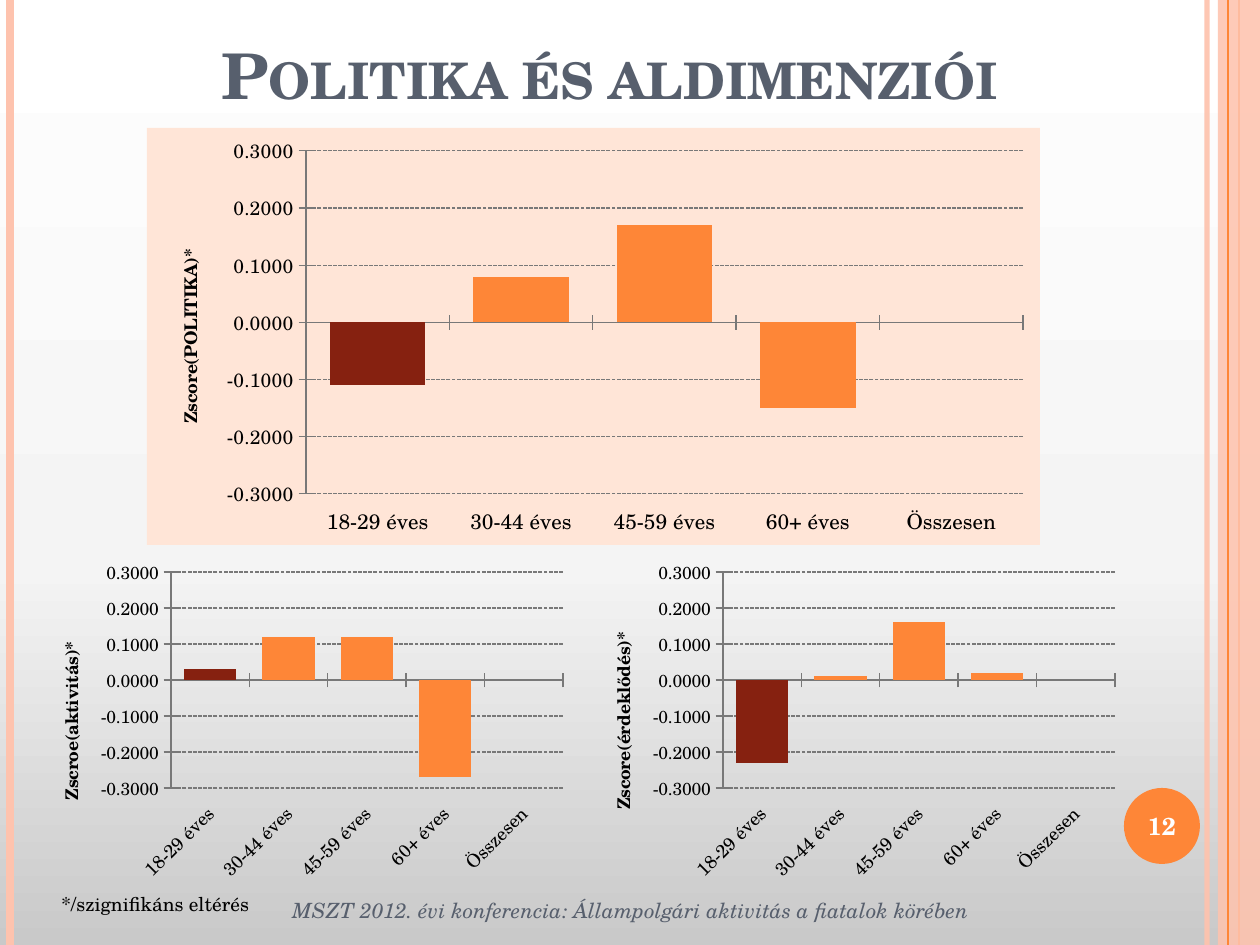
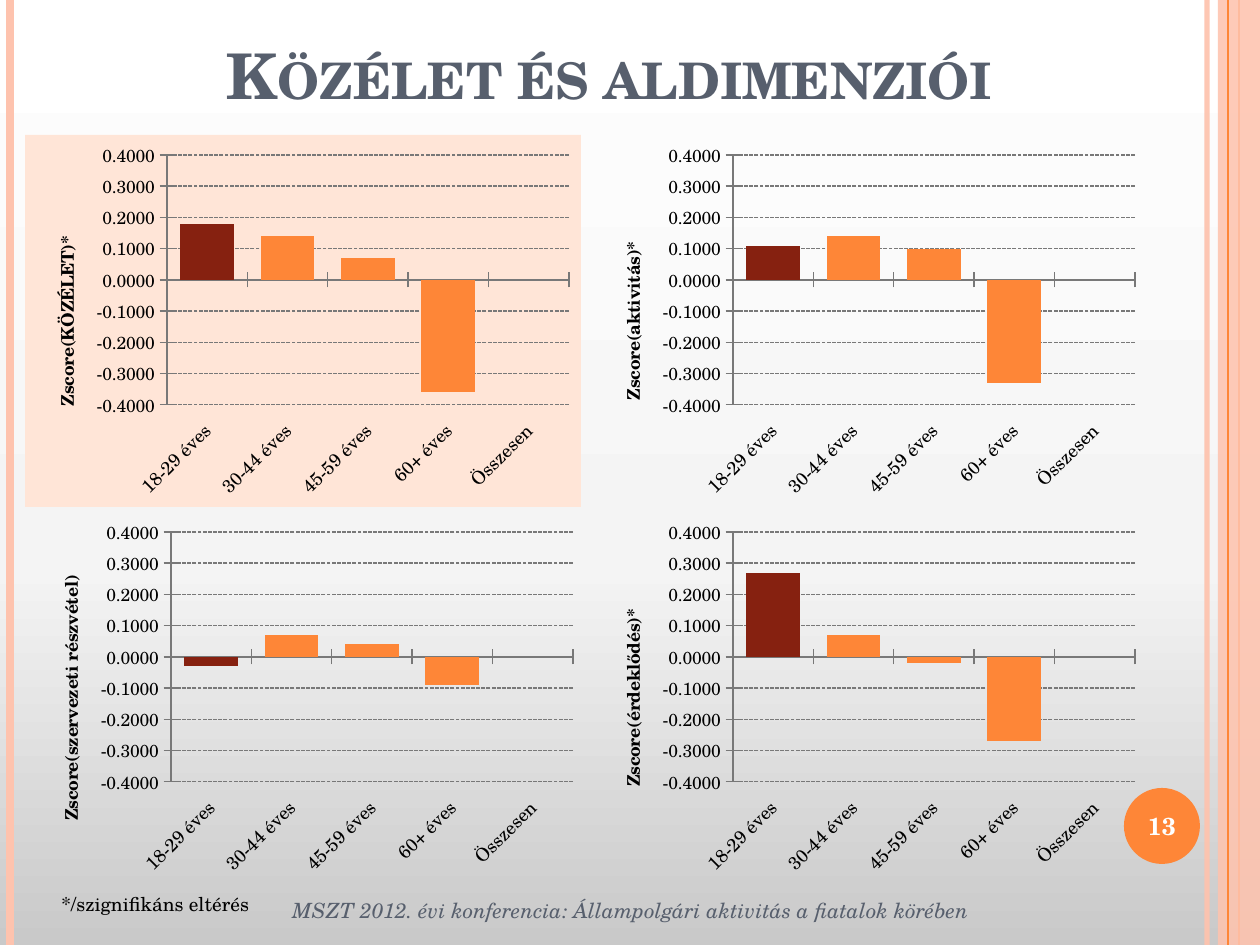
import copy

import pptx
import pptx.chart.data
import pptx.dml.color
import pptx.enum.chart
import pptx.enum.dml
import pptx.enum.shapes
import pptx.enum.text
import pptx.oxml
import pptx.oxml.ns
import pptx.util

SCALE = 914400 / 126
SLIDE_W, SLIDE_H = 1260, 945
FONT = "TeX Gyre Schola"
ORANGE, PEACH, PALE, DARK_RED = "FE8637", "FEC3AE", "FFE5D7", "862110"
SLATE, GREY, BLACK, WHITE = "575F6D", "787878", "000000", "FFFFFF"
BACKGROUND = [(0, "C9C9C9"), (0.4, "F4F4F4"), (1, "FFFFFF")]
# x, colour, width in points, opacity in percent
LINES_BEHIND = [(1207, PEACH, 3, 93), (10, PEACH, 4.5, 100), (1239, ORANGE, 1.5, 100)]
LINE_ON_BAND = (1228, ORANGE, 0.75, 100)
AGE_GROUPS = ["18-29 éves", "30-44 éves", "45-59 éves", "60+ éves", "Összesen"]
FOOTER = "MSZT 2012. évi konferencia: Állampolgári aktivitás a fiatalok körében"
FOOTNOTE = "*/szignifikáns eltérés"

LARGE = {"margins": (159, 23, 17, 51), "cat_size": 12, "val_size": 11, "turn": 0}
SMALL = {"margins": (142, 20, 12, 102), "cat_size": 10.5, "val_size": 10, "turn": -45}

ALIGN = pptx.enum.text.PP_ALIGN
ANCHOR = pptx.enum.text.MSO_ANCHOR


def px(*lengths):
    return [round(n * SCALE) for n in lengths]


def rgb(hex_colour):
    return pptx.dml.color.RGBColor.from_string(hex_colour)


def set_font(font, size, colour, **formats):
    font.name, font.size = FONT, pptx.util.Pt(size)
    font.color.rgb = rgb(colour)
    for name, value in formats.items():
        setattr(font, name, value)


def set_line(line, colour, width):
    line.color.rgb = rgb(colour)
    line.width = pptx.util.Pt(width)


def set_opacity(shape, percent):
    if percent < 100:
        colour = shape._element.spPr.xpath(".//a:srgbClr")[0]
        pptx.oxml.xmlchemy.OxmlElement  # registered with the oxml package
        alpha = pptx.oxml.parse_xml(
            f'<a:alpha {pptx.oxml.ns.nsdecls("a")} val="{percent * 1000}"/>')
        colour.append(alpha)


def add_vertical_line(s, x, colour, width, opacity):
    line = s.shapes.add_connector(
        pptx.enum.shapes.MSO_CONNECTOR.STRAIGHT, *px(x, 0, x, SLIDE_H))
    set_line(line.line, colour, width)
    set_opacity(line, opacity)
    line._element.spPr.append(
        pptx.oxml.parse_xml(f'<a:effectLst {pptx.oxml.ns.nsdecls("a")}/>'))


def add_filled(s, kind, box, colour, opacity=100):
    sp = s.shapes.add_shape(kind, *px(*box))
    sp.shadow.inherit = False
    sp.fill.solid()
    sp.fill.fore_color.rgb = rgb(colour)
    sp.line.fill.background()
    set_opacity(sp, opacity)


def write(sp, text, size, colour, align, anchor, wrap=True, **formats):
    tf = sp.text_frame
    tf.auto_size = pptx.enum.text.MSO_AUTO_SIZE.NONE
    tf.word_wrap, tf.vertical_anchor = wrap, anchor
    p = tf.paragraphs[0]
    p.alignment = align
    r = p.add_run()
    r.text = text
    set_font(r.font, size, colour, **formats)
    return r


def add_text(s, box, *args, **formats):
    write(s.shapes.add_textbox(*px(*box)), *args, **formats)


def set_background(master):
    fill = master.background.fill
    fill.gradient()
    fill.gradient_angle = 90
    stops = master._element.xpath(".//p:bg//a:gsLst")[0]
    stops.append(copy.deepcopy(stops[0]))
    for stop, (position, colour) in zip(fill.gradient_stops, BACKGROUND):
        stop.position = position
        stop.color.rgb = rgb(colour)


def add_side_bands(s):
    shapes = pptx.enum.shapes.MSO_SHAPE
    for line in LINES_BEHIND:
        add_vertical_line(s, *line)
    add_filled(s, shapes.RECTANGLE, (1218, 0, SLIDE_W - 1218, SLIDE_H), PEACH, 87)
    add_vertical_line(s, *LINE_ON_BAND)
    add_filled(s, shapes.OVAL, (1124, 788, 76, 76), ORANGE)


def add_framed_slide(prs, title, number):
    s = prs.slides.add_slide(prs.slide_layouts[5])
    add_side_bands(s)
    add_text(s, (1120, 790, 84, 72), str(number), 14, WHITE,
             ALIGN.CENTER, ANCHOR.MIDDLE, bold=True)
    sp = s.shapes.title
    sp.left, sp.top, sp.width, sp.height = px(137, 29, 945, 89)
    r = write(sp, title, 36, SLATE, ALIGN.CENTER, ANCHOR.BOTTOM, bold=True)
    r.font._element.set("cap", "small")
    add_text(s, (168, 886, 925, 49), FOOTER, 12, SLATE,
             ALIGN.CENTER, ANCHOR.MIDDLE, italic=True)
    add_text(s, (49, 886, 215, 37), FOOTNOTE, 11, BLACK,
             ALIGN.LEFT, ANCHOR.TOP, wrap=False)
    return s


def set_chart_fill(chart, colour):
    fill = (f'<a:solidFill><a:srgbClr val="{colour}"/></a:solidFill>'
            if colour else "<a:noFill/>")
    chart._chartSpace.xpath("c:txPr")[0].addprevious(pptx.oxml.parse_xml(
        f'<c:spPr {pptx.oxml.ns.nsdecls("c", "a")}>{fill}<a:ln><a:noFill/></a:ln></c:spPr>'))


def set_plot_box(chart, width, height, margins):
    """Fix the inner plot area by its margins inside the chart."""
    left, top, right, bottom = margins
    parts = {"x": left / width, "y": top / height,
             "w": (width - left - right) / width,
             "h": (height - top - bottom) / height}
    values = "".join(f'<c:{k} val="{v:.4f}"/>' for k, v in parts.items())
    plot = chart._chartSpace.xpath(".//c:plotArea")[0]
    for old in plot.xpath("c:layout"):
        plot.remove(old)
    plot.insert(0, pptx.oxml.parse_xml(
        f'<c:layout {pptx.oxml.ns.nsdecls("c")}><c:manualLayout>'
        '<c:layoutTarget val="inner"/><c:xMode val="edge"/><c:yMode val="edge"/>'
        f'{values}</c:manualLayout></c:layout>'))


def format_axes(chart, title, limit, style):
    enums = pptx.enum.chart
    cat, val = chart.category_axis, chart.value_axis
    for axis, size in ((cat, style["cat_size"]), (val, style["val_size"])):
        axis.major_tick_mark = enums.XL_TICK_MARK.CROSS
        axis.minor_tick_mark = enums.XL_TICK_MARK.NONE
        set_font(axis.tick_labels.font, size, BLACK)
        set_line(axis.format.line, GREY, 0.75)
    cat.tick_label_position = enums.XL_TICK_LABEL_POSITION.LOW
    cat._element.xpath("c:txPr/a:bodyPr")[0].set("rot", str(style["turn"] * 60000))
    val.minimum_scale, val.maximum_scale, val.major_unit = -limit, limit, 0.1
    val.tick_labels.number_format = "#,##0.0000"
    val.tick_labels.number_format_is_linked = False
    val.has_major_gridlines = True
    grid = val.major_gridlines.format.line
    set_line(grid, GREY, 0.75)
    grid.dash_style = pptx.enum.dml.MSO_LINE.SQUARE_DOT
    tf = val.axis_title.text_frame
    tf._txBody.bodyPr.set("rot", "-5400000")
    tf._txBody.bodyPr.set("vert", "horz")
    r = tf.paragraphs[0].add_run()
    r.text = title
    set_font(r.font, 10, BLACK, bold=True)


def add_score_chart(s, box, title, scores, limit, style=SMALL, fill=None):
    data = pptx.chart.data.CategoryChartData(number_format="#,##0.0000")
    data.categories = AGE_GROUPS
    data.add_series("Series 1", scores + [None])
    chart = s.shapes.add_chart(
        pptx.enum.chart.XL_CHART_TYPE.COLUMN_CLUSTERED, *px(*box), data).chart
    chart.has_legend = chart.has_title = False
    set_font(chart.font, 10, BLACK)
    set_chart_fill(chart, fill)
    set_plot_box(chart, *box[2:], style["margins"])
    format_axes(chart, title, limit, style)
    plot = chart.plots[0]
    plot.gap_width, plot.vary_by_categories = 50, False
    series = plot.series[0]
    series.invert_if_negative = False
    for part, colour in ((series, ORANGE), (series.points[0], DARK_RED)):
        part.format.fill.solid()
        part.format.fill.fore_color.rgb = rgb(colour)


def add_politics_slide(prs):
    s = add_framed_slide(prs, "Politika és aldimenziói", 12)
    add_score_chart(s, (147, 128, 893, 417), "Zscore(POLITIKA)*",
                    [-0.11, 0.08, 0.17, -0.15], 0.3, LARGE, PALE)
    for x, title, scores in (
            (29, "Zscroe(aktivitás)*", [0.03, 0.12, 0.12, -0.27]),
            (581, "Zscore(érdeklődés)*", [-0.23, 0.01, 0.16, 0.02])):
        add_score_chart(s, (x, 552, 546, 338), title, scores, 0.3)


def add_public_life_slide(prs):
    s = add_framed_slide(prs, "Közélet és aldimenziói", 13)
    for x, y, title, scores, fill in (
            (25, 135, "Zscore(KÖZÉLET)*", [0.18, 0.14, 0.07, -0.36], PALE),
            (29, 512, "Zscore(szervezeti részvétel)", [-0.03, 0.07, 0.04, -0.09], None),
            (591, 135, "Zscore(aktivitás)*", [0.11, 0.14, 0.1, -0.33], None),
            (591, 512, "Zscore(érdeklődés)*", [0.27, 0.07, -0.02, -0.27], None)):
        add_score_chart(s, (x, y, 556, 372), title, scores, 0.4, fill=fill)


def main():
    prs = pptx.Presentation()
    prs.slide_width, prs.slide_height = px(SLIDE_W, SLIDE_H)
    set_background(prs.slide_master)
    add_politics_slide(prs)
    add_public_life_slide(prs)
    prs.save("out.pptx")


if __name__ == "__main__":
    main()
